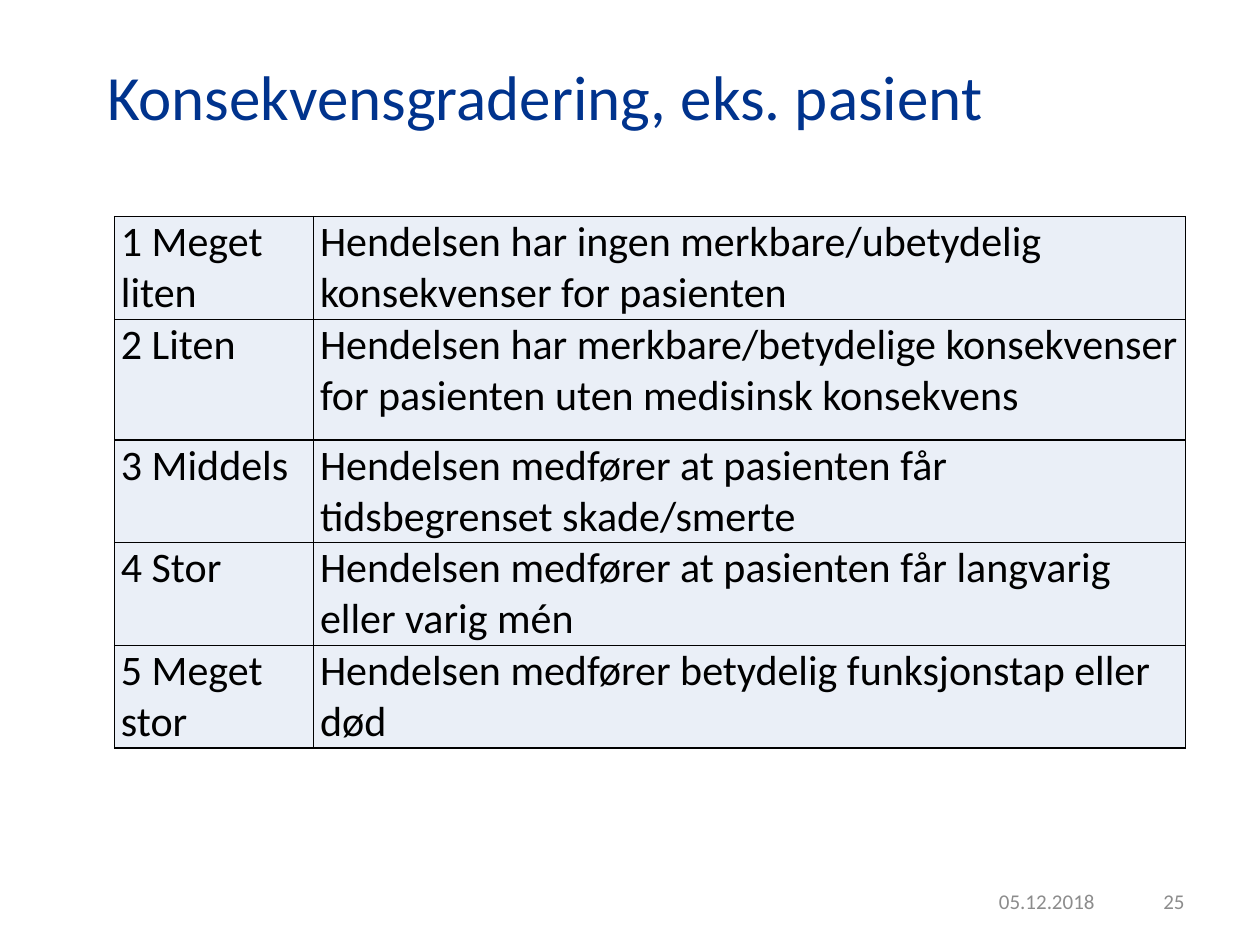
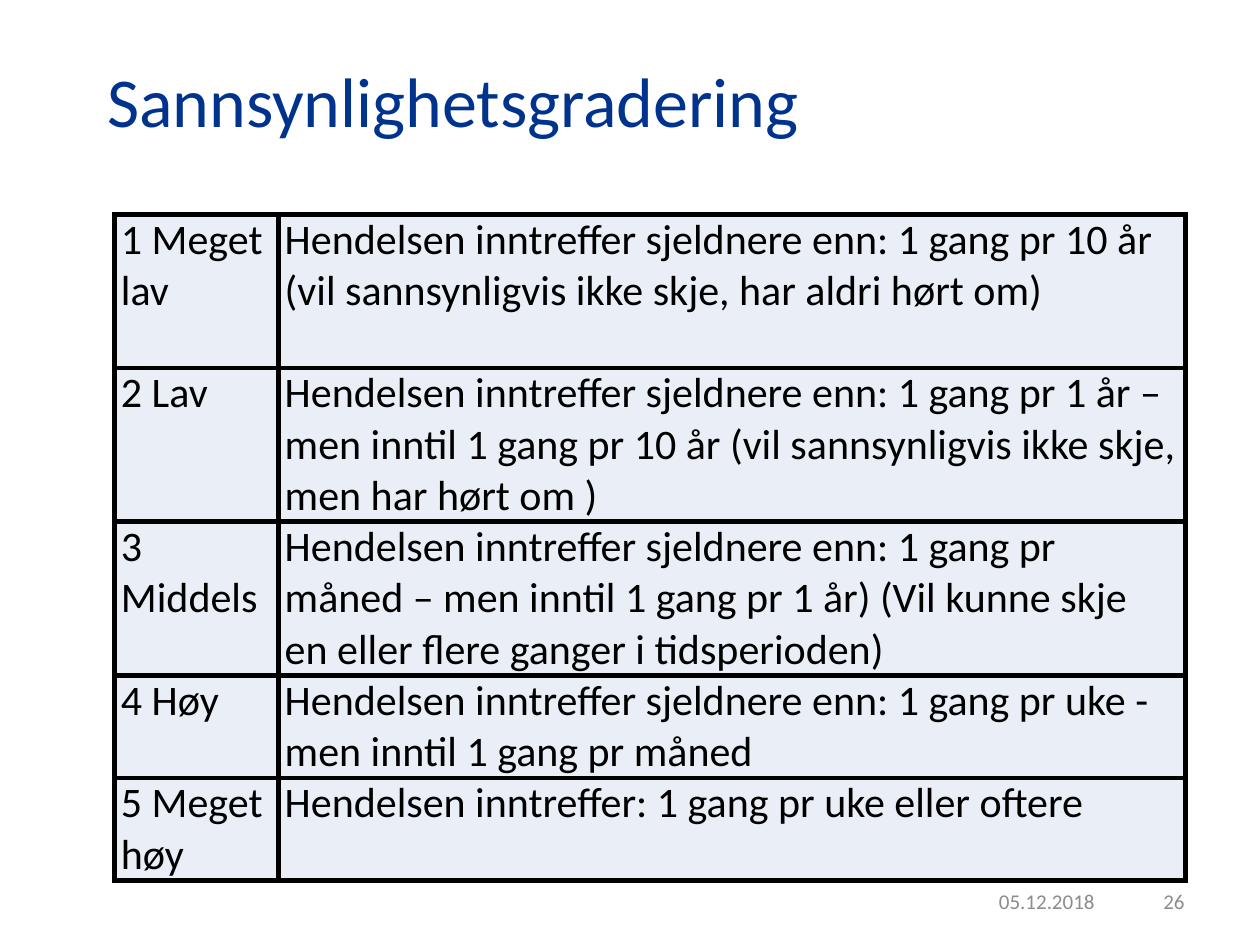
from lxml import etree
from pptx import Presentation, util as u
from pptx.dml.color import RGBColor
from pptx.enum import text
from pptx.oxml import ns

CONSEQUENCES = [
    ("1 Meget liten", "Hendelsen har ingen merkbare/ubetydelig konsekvenser for pasienten"),
    ("2 Liten", "Hendelsen har merkbare/betydelige konsekvenser for pasienten uten medisinsk konsekvens"),
    ("3 Middels", "Hendelsen medfører at pasienten får tidsbegrenset skade/smerte"),
    ("4 Stor", "Hendelsen medfører at pasienten får langvarig eller varig mén"),
    ("5 Meget stor", "Hendelsen medfører betydelig funksjonstap eller død"),
]
PROBABILITIES = [
    ("1 Meget lav", "Hendelsen inntreffer sjeldnere enn: 1 gang pr 10 år "
                    "(vil sannsynligvis ikke skje, har aldri hørt om)"),
    ("2 Lav", "Hendelsen inntreffer sjeldnere enn: 1 gang pr 1 år – men inntil 1 gang pr 10 år "
              "(vil sannsynligvis ikke skje, men har hørt om )"),
    ("3 Middels", "Hendelsen inntreffer sjeldnere enn: 1 gang pr måned – men inntil 1 gang pr 1 år) "
                  "(Vil kunne skje en eller flere ganger i tidsperioden)"),
    ("4 Høy", "Hendelsen inntreffer sjeldnere enn: 1 gang pr uke - men inntil 1 gang pr måned"),
    ("5 Meget høy", "Hendelsen inntreffer: 1 gang pr uke eller oftere"),
]


def rgb(color):
    return RGBColor.from_string(color)


class Deck:
    FONT = "Calibri"
    BLUE, BLACK, GREY, CELL = "00338D", "000000", "8C8C8C", "EAEFF7"
    COLS, ROWS = 100, 75
    TABLE_LEFT, TABLE_WIDTH = 9.1, 85

    def __init__(self):
        self.prs = Presentation()
        self.prs.slide_width, self.prs.slide_height = u.Inches(10), u.Inches(7.5)
        self.s = None

    def x(self, cols):
        return round(self.prs.slide_width * cols / self.COLS)

    def y(self, rows):
        return round(self.prs.slide_height * rows / self.ROWS)

    def box(self, left, top, width, height):
        return self.x(left), self.y(top), self.x(width), self.y(height)

    def put_text(self, tf, words, size, color, align="LEFT"):
        tf.word_wrap = True
        p = tf.paragraphs[0]
        p.alignment = text.PP_ALIGN[align]
        r = p.add_run()
        r.text = words
        for name, value in dict(name=self.FONT, size=u.Pt(size), bold=False).items():
            setattr(r.font, name, value)
        r.font.color.rgb = rgb(color)

    def slide(self, title, size):
        self.s = self.prs.slides.add_slide(self.prs.slide_layouts.get_by_name("Title Only"))
        sp = self.s.shapes.title
        sp.left, sp.top, sp.width, sp.height = self.box(7.5, 4.1, 72.4, 11.4)
        sp.text_frame.auto_size = text.MSO_AUTO_SIZE.NONE
        sp.text_frame.vertical_anchor = text.MSO_ANCHOR.TOP
        self.put_text(sp.text_frame, title, size, self.BLUE)

    def label(self, words, left, width, align="LEFT"):
        tf = self.s.shapes.add_textbox(*self.box(left, 69.5, width, 4)).text_frame
        tf.vertical_anchor = text.MSO_ANCHOR.MIDDLE
        self.put_text(tf, words, 12, self.GREY, align)

    def footer(self, number):
        self.label("05.12.2018", 78.3, 10.2)
        self.label(str(number), 90.2, 4.8, "RIGHT")

    def borders(self, cell, width):
        tc_pr = cell._tc.get_or_add_tcPr()
        for side in ("lnL", "lnR", "lnT", "lnB"):
            ln = etree.SubElement(tc_pr, ns.qn("a:" + side), w=str(u.Pt(width)))
            fill = etree.SubElement(ln, ns.qn("a:solidFill"))
            etree.SubElement(fill, ns.qn("a:srgbClr"), val=self.BLACK)

    def grading(self, grades, top, first_col, heights, line):
        frame = self.s.shapes.add_table(
            len(grades), 2, *self.box(self.TABLE_LEFT, top, self.TABLE_WIDTH, sum(heights)))
        table = frame.table
        table.first_row = table.horz_banding = False
        for col, width in zip(table.columns, (first_col, self.TABLE_WIDTH - first_col)):
            col.width = self.x(width)
        for row, height, grade in zip(table.rows, heights, grades):
            row.height = self.y(height)
            for cell, words in zip(row.cells, grade):
                for side, inset in dict(left=0.05, top=0, right=0.05, bottom=0).items():
                    setattr(cell, "margin_" + side, u.Inches(inset))
                self.borders(cell, line)
                cell.fill.solid()
                cell.fill.fore_color.rgb = rgb(self.CELL)
                self.put_text(cell.text_frame, words, 24, self.BLACK)


def main():
    deck = Deck()
    two_lines, three_lines = 8.1, 12.2

    deck.slide("Konsekvensgradering, eks. pasient", 36)
    deck.grading(CONSEQUENCES, 17.2, 15.8, [two_lines, 9.6] + [two_lines] * 3, line=1)
    deck.footer(25)

    deck.slide("Sannsynlighetsgradering", 40)
    deck.grading(PROBABILITIES, 17, 13, [three_lines] * 3 + [two_lines] * 2, line=3)
    deck.footer(26)

    deck.prs.save("out.pptx")


if __name__ == "__main__":
    main()
